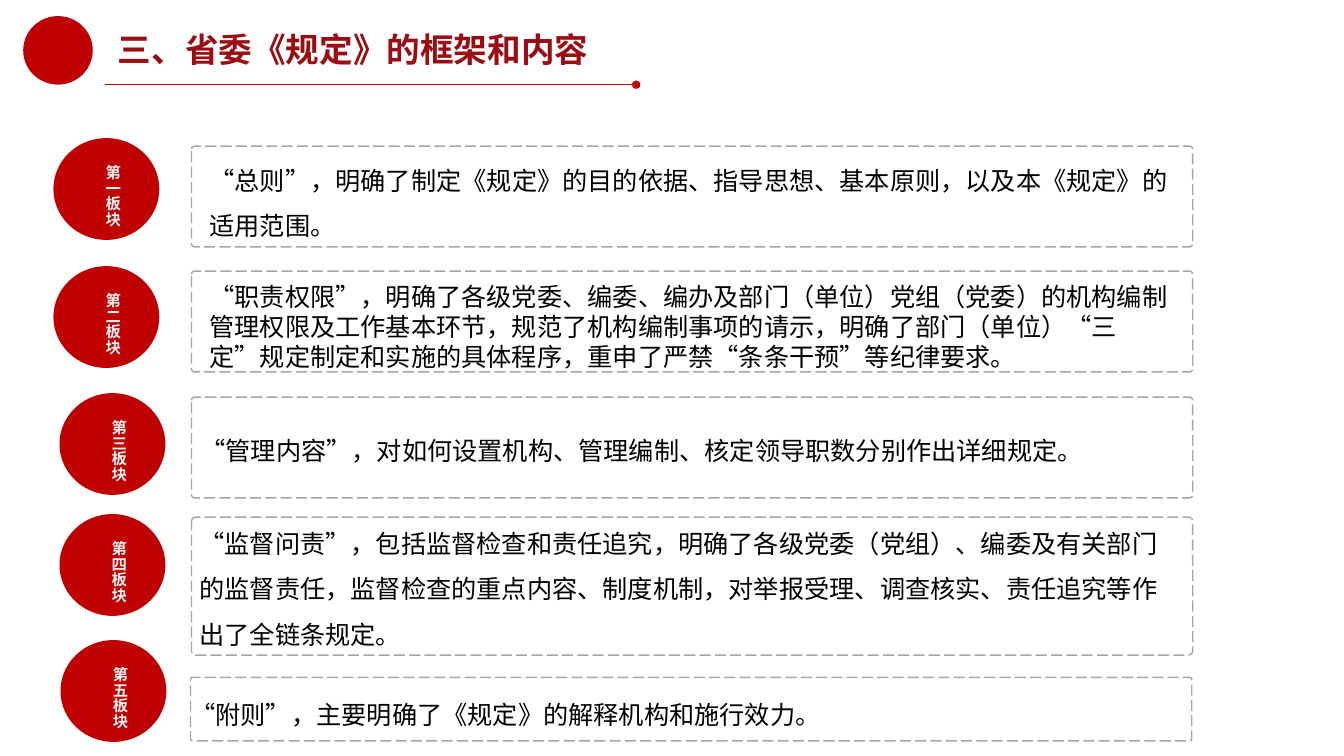
from pptx import Presentation
from pptx.dml.color import RGBColor
from pptx.enum.dml import MSO_LINE
from pptx.enum.shapes import MSO_CONNECTOR, MSO_SHAPE as Shape
from pptx.enum.text import MSO_AUTO_SIZE as Auto
from pptx.oxml.ns import qn
from pptx.util import Inches, Pt
from lxml import etree

FACE = "Noto Sans CJK SC"
RED = "C00000"

# label, disc (left, top), frame (left, top, height),
# text (left, top, width, height), line spacing, text
ROWS = [
    ("第一板块", (0.53, 1.37), (1.9, 1.45, 1), (1.98, 1.44, 9.85, 1.01), 1.5,
     "“总则”，明确了制定《规定》的目的依据、指导思想、基本原则，以及本《规定》的适用范围。"),
    ("第二板块", (0.53, 2.64), (1.9, 2.69, 1), (1.98, 2.74, 9.73, 1.01), 1.0,
     "“职责权限”，明确了各级党委、编委、编办及部门（单位）党组（党委）的机构编制"
     "管理权限及工作基本环节，规范了机构编制事项的请示，明确了部门（单位）“三定”规定"
     "制定和实施的具体程序，重申了严禁“条条干预”等纪律要求。"),
    ("第三板块", (0.59, 3.9), (1.9, 3.94, 1), (1.89, 4.12, 9.83, 0.56), 1.5,
     "“管理内容”，对如何设置机构、管理编制、核定领导职数分别作出详细规定。"),
    ("第四板块", (0.59, 5.1), (1.9, 5.13, 1.37), (1.88, 5.04, 9.94, 2.01), 1.5,
     "“监督问责”，包括监督检查和责任追究，明确了各级党委（党组）、编委及有关部门"
     "的监督责任，监督检查的重点内容、制度机制，对举报受理、调查核实、责任追究等作"
     "出了全链条规定。"),
    ("第五板块", (0.6, 6.35), (1.89, 6.72, 0.63), (1.79, 6.74, 8.73, 0.5), 1.5,
     "“附则”，主要明确了《规定》的解释机构和施行效力。"),
]


def color(code):
    return RGBColor.from_string(code)


def place(box):
    return [Inches(n) for n in box]


def add_text(slide, box, text, size, ink, bold=False, space=1.0, upright=False):
    """Add a one-paragraph text box; upright sets the text in a column."""
    frame = slide.shapes.add_textbox(*place(box)).text_frame
    frame.word_wrap = not upright
    frame.auto_size = Auto.SHAPE_TO_FIT_TEXT
    if upright:
        frame._txBody.bodyPr.set("vert", "eaVert")
    para = frame.paragraphs[0]
    para.text = text
    para.line_spacing = space
    font = para.font
    font.name, font.size, font.bold = FACE, Pt(size), bold
    font.color.rgb = color(ink)
    etree.SubElement(font._element, qn("a:ea"), typeface=FACE)


def add_disc(slide, box):
    disc = slide.shapes.add_shape(Shape.OVAL, *place(box))
    disc.shadow.inherit = False
    disc.fill.solid()
    disc.fill.fore_color.rgb = color(RED)
    disc.line.fill.background()


def add_frame(slide, box):
    """Add a dashed outline with slightly rounded corners."""
    frame = slide.shapes.add_shape(Shape.ROUNDED_RECTANGLE, *place(box))
    frame.adjustments[0] = 0.03
    frame.shadow.inherit = False
    frame.fill.background()
    frame.line.color.rgb = color("A6A6A6")
    frame.line.width = Pt(1)
    frame.line.dash_style = MSO_LINE.LONG_DASH


def add_header(slide, left, top):
    add_disc(slide, (left, top, 0.69, 0.68))
    rule = slide.shapes.add_connector(
        MSO_CONNECTOR.STRAIGHT,
        *place((left + 0.81, top + 0.68, left + 6.08, top + 0.68)))
    rule.line.color.rgb = color(RED)
    rule.line.width = Pt(0.75)
    etree.SubElement(rule.line._get_or_add_ln(), qn("a:tailEnd"), type="oval")
    etree.SubElement(rule._element.spPr, qn("a:effectLst"))
    add_text(slide, (left + 0.84, top + 0.12, 10.92, 0.49),
             "三、省委《规定》的框架和内容", 24, "9B0D13", bold=True, space=0.9)


def add_row(slide, label, disc, frame, box, space, text):
    left, top = disc
    add_disc(slide, (left, top, 1.05, 1.01))
    add_text(slide, (left + 0.34, top + 0.17, 0.39, 0.72), label, 11, "F2F2F2",
             bold=True, upright=True)
    x, y, high = frame
    add_frame(slide, (x, y, 9.93, high))
    add_text(slide, box, text, 18, "000000", space=space)


def main():
    deck = Presentation()
    deck.slide_width, deck.slide_height = Inches(13.33), Inches(7.5)
    slide = deck.slides.add_slide(deck.slide_layouts[6])
    add_header(slide, 0.23, 0.16)
    for row in ROWS:
        add_row(slide, *row)
    deck.save("out.pptx")


if __name__ == "__main__":
    main()
